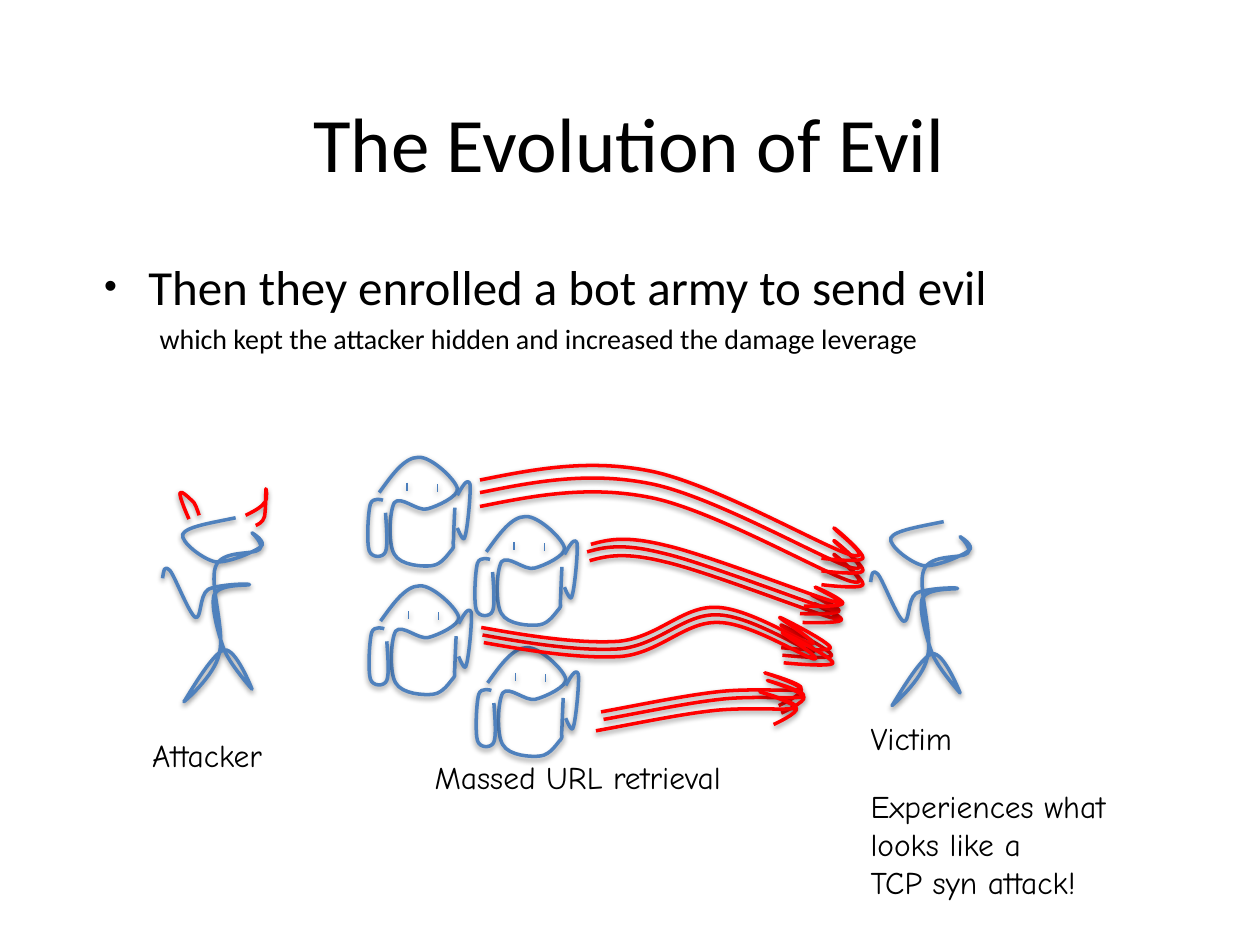
"""Build the slide 'The Evolution of Evil' with its sketched bot attack."""
from lxml import etree
from pptx import Presentation
from pptx.dml.color import RGBColor
from pptx.enum.shapes import MSO_CONNECTOR
from pptx.enum.text import MSO_ANCHOR, MSO_AUTO_SIZE, PP_ALIGN
from pptx.oxml.ns import qn
from pptx.util import Cm, Pt

BLACK = RGBColor(0x00, 0x00, 0x00)
RED = RGBColor(0xFF, 0x00, 0x00)
BLUE = RGBColor(0x4F, 0x81, 0xBD)
EYE_BLUE = RGBColor(0x4B, 0x7E, 0xBC)
STRAIGHT = MSO_CONNECTOR.STRAIGHT
MIDDLE = MSO_ANCHOR.MIDDLE
CENTER = PP_ALIGN.CENTER
GROW = MSO_AUTO_SIZE.SHAPE_TO_FIT_TEXT
UNIT = Cm(2.54)


def ink(stroke, color, width):
    stroke.line.color.rgb = color
    stroke.line.width = Pt(width)
    effects = etree.SubElement(stroke._element.spPr, qn("a:effectLst"))
    shadow = etree.SubElement(effects, qn("a:outerShdw"), blurRad="40000",
                              dist="20000", dir="5400000", rotWithShape="0")
    shade = etree.SubElement(shadow, qn("a:srgbClr"), val="000000")
    etree.SubElement(shade, qn("a:alpha"), val="38000")


def draw_curve(shapes, points, color, dx=0, dy=0):
    spots = [(round((x + dx) * UNIT), round((y + dy) * UNIT)) for x, y in points]
    builder = shapes.build_freeform(*spots[0])
    builder.add_line_segments(spots[3::3], close=False)
    curve = builder.convert_to_shape()
    curve.fill.background()
    segments = list(curve._element.iter(qn("a:lnTo")))
    for number, segment in enumerate(segments):
        segment.tag = qn("a:cubicBezTo")
        for place in (1, 2):
            x, y = spots[3 * number + place]
            handle = etree.Element(qn("a:pt"), x=str(x - curve.left), y=str(y - curve.top))
            segment.insert(place - 1, handle)
    ink(curve, color, 2)


FIGURE = [
    (1.87, 4.11), (1.68, 4.15), (1.48, 4.18), (1.45, 4.24), (1.43, 4.3), (1.61, 4.44),
    (1.71, 4.46), (1.81, 4.47), (2.02, 4.38), (2.07, 4.34), (2.12, 4.3), (2, 4.23),
    (2, 4.23), (2, 4.23), (2.1, 4.32), (2.06, 4.36), (2.01, 4.41), (1.76, 4.36),
    (1.71, 4.5), (1.66, 4.64), (1.79, 5.01), (1.74, 5.19), (1.7, 5.37), (1.46, 5.57),
    (1.46, 5.57), (1.47, 5.56), (1.69, 5.17), (1.78, 5.16), (1.87, 5.14), (2, 5.47),
    (2, 5.47), (2, 5.47), (1.83, 5.28), (1.78, 5.16), (1.73, 5.03), (1.67, 4.8),
    (1.7, 4.72), (1.74, 4.63), (1.99, 4.65), (1.98, 4.64), (1.97, 4.63), (1.72, 4.64),
    (1.65, 4.68), (1.58, 4.73), (1.6, 4.92), (1.55, 4.9), (1.5, 4.87), (1.39, 4.58),
    (1.35, 4.53), (1.3, 4.48), (1.3, 4.53), (1.29, 4.59)]
HORNS = [
    [(1.5, 4.12), (1.46, 4.03), (1.42, 3.93), (1.43, 3.91), (1.44, 3.89), (1.51, 3.96),
     (1.54, 3.99), (1.56, 4.02), (1.58, 4.09), (1.58, 4.09)],
    [(1.95, 4.09), (2.01, 4.06), (2.07, 4.03), (2.1, 3.99), (2.13, 3.96), (2.11, 3.86),
     (2.11, 3.88), (2.11, 3.89), (2.11, 4.05), (2.1, 4.1), (2.09, 4.15), (2.03, 4.17),
     (2.03, 4.17)]]
BOT_HEAD = [
    (3.01, 3.91), (3.11, 3.77), (3.21, 3.63), (3.32, 3.63), (3.42, 3.62), (3.62, 3.81),
    (3.63, 3.88), (3.64, 3.94), (3.47, 4.02), (3.39, 4.04), (3.31, 4.06), (3.18, 3.93),
    (3.13, 3.99), (3.09, 4.06), (3.08, 4.32), (3.13, 4.4), (3.18, 4.49), (3.36, 4.5),
    (3.43, 4.49), (3.51, 4.48), (3.56, 4.39), (3.59, 4.36), (3.61, 4.33), (3.59, 4.34),
    (3.6, 4.28), (3.6, 4.23), (3.61, 4.03), (3.61, 4.03)]
BOT_ARMS = [
    [(3.06, 4.07), (3.07, 4.2), (3.08, 4.33), (3.06, 4.38), (3.04, 4.43), (2.95, 4.43),
     (2.93, 4.37), (2.91, 4.31), (2.92, 4.07), (2.94, 4), (2.96, 3.94), (3.04, 3.97),
     (3.04, 3.97)],
    [(3.63, 3.93), (3.67, 3.86), (3.71, 3.79), (3.73, 3.84), (3.74, 3.9), (3.71, 4.21),
     (3.69, 4.26), (3.68, 4.32), (3.63, 4.19), (3.63, 4.19)]]
BOT_EYES = [(3.23, 3.83), (3.47, 3.84)]
BOT_OFFSETS = [(0, 0), (0.01, 1.02), (0.85, 0.47), (0.86, 1.51)]
STREAMS = [
    ([(3.81, 4.02), (4.25, 3.93), (4.68, 3.85), (5.17, 3.95), (5.66, 4.05), (6.5, 4.53),
      (6.74, 4.61), (6.98, 4.68), (6.6, 4.4), (6.62, 4.4), (6.64, 4.41), (6.86, 4.6),
      (6.85, 4.64), (6.83, 4.68), (6.52, 4.64), (6.52, 4.64)],
     [(0, 0), (0, -0.11), (0, -0.21)]),
    ([(4.68, 4.45), (4.82, 4.41), (4.96, 4.38), (5.28, 4.46), (5.59, 4.53), (6.39, 4.84),
      (6.59, 4.9), (6.79, 4.95), (6.45, 4.79), (6.46, 4.79), (6.47, 4.79), (6.69, 4.89),
      (6.68, 4.92), (6.66, 4.95), (6.37, 4.94), (6.37, 4.94)],
     [(0, 0), (-0.02, -0.07), (0.01, -0.13)]),
    ([(3.83, 5.04), (4.22, 5.11), (4.61, 5.17), (4.92, 5.15), (5.23, 5.12), (5.43, 4.87),
      (5.69, 4.88), (5.94, 4.88), (6.36, 5.15), (6.45, 5.17), (6.54, 5.18), (6.18, 4.96),
      (6.2, 4.96), (6.23, 4.97), (6.6, 5.16), (6.6, 5.2), (6.6, 5.24), (6.21, 5.2),
      (6.21, 5.2)],
     [(0, 0), (-0.01, -0.06), (0.01, 0.06)]),
    ([(4.77, 5.65), (5.1, 5.59), (5.43, 5.52), (5.7, 5.49), (5.96, 5.46), (6.29, 5.49),
      (6.35, 5.47), (6.42, 5.44), (6.07, 5.34), (6.07, 5.34), (6.07, 5.34), (6.35, 5.43),
      (6.36, 5.47), (6.38, 5.51), (6.18, 5.6), (6.18, 5.6)],
     [(0, 0), (0.02, 0.06), (-0.04, 0.15)])]
LABELS = [
    (2.82, 14.71, 3.25, 1.02, ["Attacker"]),
    (17.3, 14.38, 2.57, 1.02, ["Victim"]),
    (8.51, 15.16, 7.82, 1.02, ["Massed URL retrieval"]),
    (17.3, 15.75, 6.3, 2.57, ["Experiences what", "looks like a", "TCP syn attack!"])]
POINTS = [
    ("Then they enrolled a bot army to send evil", 28, 0, Cm(0.89), Cm(-0.89)),
    ("which kept the attacker hidden and increased the damage leverage", 16, 1, Cm(1.12), 0)]

deck = Presentation()
deck.slide_width, deck.slide_height = Cm(25.4), Cm(19.05)
slide = deck.slides.add_slide(deck.slide_layouts[6])
canvas = slide.shapes

title = canvas.add_textbox(Cm(1.85), Cm(0.79), Cm(21.67), Cm(4.14)).text_frame
title.word_wrap = True
title.vertical_anchor = MIDDLE
title.paragraphs[0].alignment = CENTER
heading = title.paragraphs[0].add_run()
heading.text = "The Evolution of Evil"
heading.font.size = Pt(44)
heading.font.name = "Calibri"
heading.font.color.rgb = BLACK

body = canvas.add_textbox(Cm(1.85), Cm(5.05), Cm(21.67), Cm(12.27)).text_frame
body.word_wrap = True
for number, (wording, size, level, margin, indent) in enumerate(POINTS):
    point = body.add_paragraph() if number else body.paragraphs[0]
    point.level = level
    point.space_before = Pt(size * 0.2)
    statement = point.add_run()
    statement.text = wording
    statement.font.size = Pt(size)
    statement.font.name = "Calibri"
    statement.font.color.rgb = BLACK
    layout = point._p.get_or_add_pPr()
    layout.set("marL", str(margin))
    layout.set("indent", str(indent))
    if indent:
        etree.SubElement(layout, qn("a:buSzPct"), val="75000")
        etree.SubElement(layout, qn("a:buFont"), typeface="Arial")
        etree.SubElement(layout, qn("a:buChar"), char="•")
    else:
        etree.SubElement(layout, qn("a:buNone"))

draw_curve(canvas, FIGURE, BLUE)
for horn in HORNS:
    draw_curve(canvas, horn, RED)
draw_curve(canvas, FIGURE, BLUE, 5.62, 0.03)

for dx, dy in BOT_OFFSETS:
    bot = canvas.add_group_shape().shapes
    for part in [BOT_HEAD, *BOT_ARMS]:
        draw_curve(bot, part, BLUE, dx, dy)
    for x, y in BOT_EYES:
        across, top = round((x + dx) * UNIT), round((y + dy) * UNIT)
        eye = bot.add_connector(STRAIGHT, across, top, across, top + Cm(0.16))
        ink(eye, EYE_BLUE, 0.75)

for stream, offsets in STREAMS:
    for dx, dy in offsets:
        draw_curve(canvas, stream, RED, dx, dy)

for left, top, width, height, rows in LABELS:
    label = canvas.add_textbox(Cm(left), Cm(top), Cm(width), Cm(height)).text_frame
    label.word_wrap = False
    label.auto_size = GROW
    for number, row in enumerate(rows):
        caption = label.add_paragraph() if number else label.paragraphs[0]
        words = caption.add_run()
        words.text = row
        words.font.size = Pt(18)
        words.font.name = "Comic Neue"
        words.font.color.rgb = BLACK

deck.save("out.pptx")
